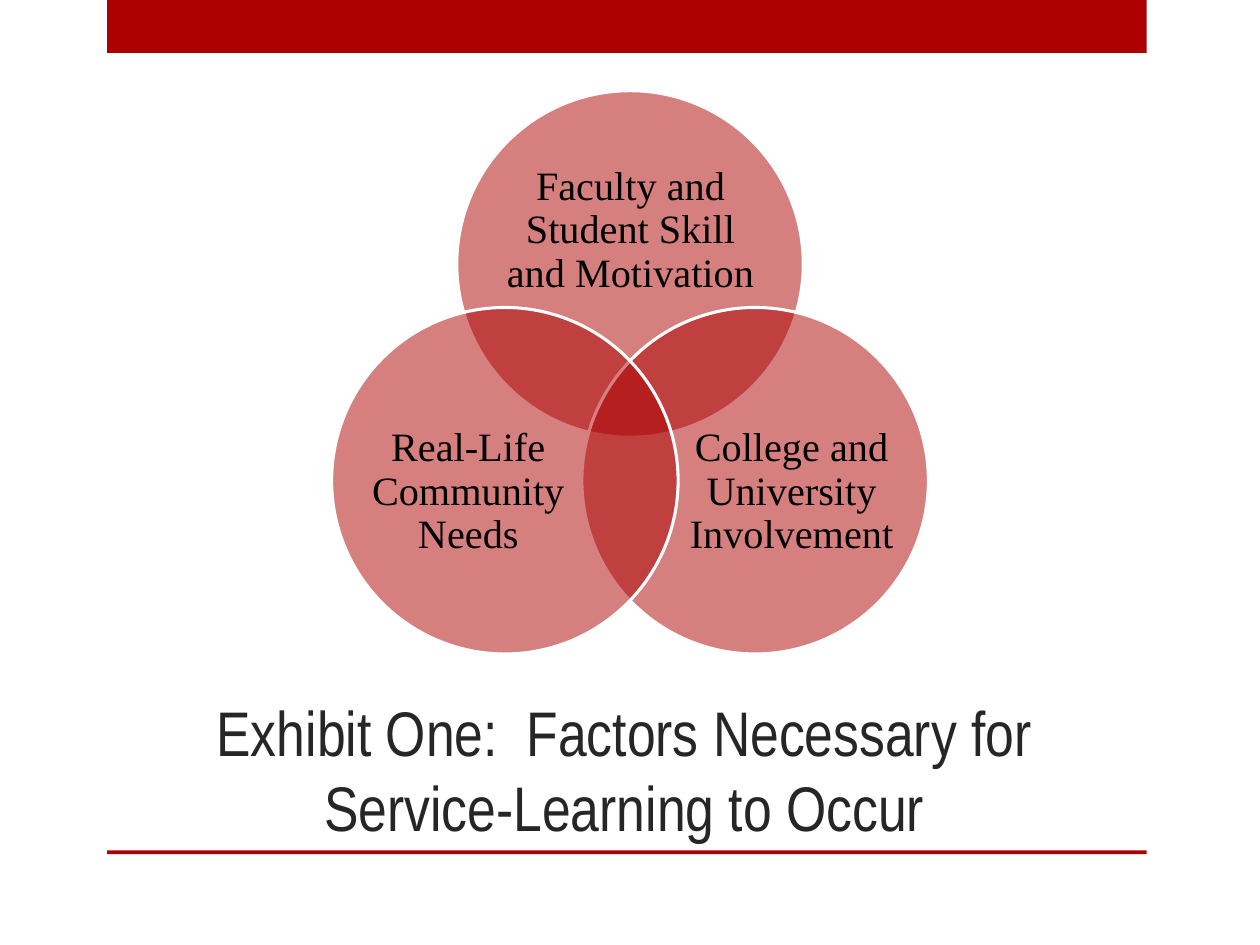
import math

from lxml import etree
from pptx import Presentation
from pptx.dml.color import RGBColor
from pptx.enum.shapes import MSO_SHAPE
from pptx.enum.text import MSO_ANCHOR, PP_ALIGN
from pptx.oxml.ns import qn
from pptx.util import Inches, Pt

RECTANGLE = MSO_SHAPE.RECTANGLE
OVAL = MSO_SHAPE.OVAL
CENTER = PP_ALIGN.CENTER
MIDDLE = MSO_ANCHOR.MIDDLE
BOTTOM = MSO_ANCHOR.BOTTOM

RED = "AD0101"
WHITE = "FFFFFF"
BLACK = "000000"
DARK_GRAY = "262626"

# Text, angle around the diagram centre, label box relative to its circle
FACTORS = [
    ("Faculty and Student Skill and Motivation", -90, (0.37, 0.49, 2.02, 1.24)),
    ("College and University Involvement", 30, (0.84, 0.71, 1.65, 1.51)),
    ("Real-Life Community Needs", 150, (0.26, 0.71, 1.65, 1.51)),
]


def color(hex_string):
    return RGBColor.from_string(hex_string)


def add_filled_shape(shapes, kind, box, fill):
    shape = shapes.add_shape(kind, *map(Inches, box))
    shape.shadow.inherit = False
    shape.fill.solid()
    shape.fill.fore_color.rgb = color(fill)
    shape.line.fill.background()
    return shape


def set_opacity(shape, percent):
    fill_color = shape.fill._xPr.find(qn("a:solidFill"))[0]
    etree.SubElement(fill_color, qn("a:alpha"), val=str(percent * 1000))


def add_text(shapes, box, text, font, size, text_color, anchor, margins, spacing=None):
    shape = shapes.add_textbox(*map(Inches, box))
    frame = shape.text_frame
    frame.word_wrap = True
    frame.vertical_anchor = anchor
    side, vertical = map(Inches, margins)
    frame.margin_left = frame.margin_right = side
    frame.margin_top = frame.margin_bottom = vertical
    paragraph = frame.paragraphs[0]
    paragraph.alignment = CENTER
    paragraph.line_spacing = spacing
    run = paragraph.add_run()
    run.text = text
    run.font.name = font
    run.font.size = Pt(size)
    run.font.color.rgb = color(text_color)


def add_bars(slide, left, width):
    # Top band and the rule below the title
    for top, height in ((0, 0.42), (6.75, 0.03)):
        add_filled_shape(slide.shapes, RECTANGLE, (left, top, width, height), RED)


def add_title(slide, box):
    add_text(slide.shapes, box,
             "Exhibit One:  Factors Necessary for Service-Learning to Occur",
             "Arial Narrow", 36, DARK_GRAY, BOTTOM, (0.2, 0.05))


def add_venn(slide, box):
    left, top, width, height = box
    diameter = 2.75
    orbit = (height - diameter) / 1.5
    center_x = left + width / 2
    center_y = top + diameter / 2 + orbit
    shapes = slide.shapes.add_group_shape().shapes
    for text, angle, (label_x, label_y, label_width, label_height) in FACTORS:
        radians = math.radians(angle)
        x = center_x + orbit * math.cos(radians) - diameter / 2
        y = center_y + orbit * math.sin(radians) - diameter / 2
        # Translucent circle with its label
        circle = add_filled_shape(shapes, OVAL, (x, y, diameter, diameter), RED)
        set_opacity(circle, 50)
        circle.line.color.rgb = color(WHITE)
        circle.line.width = Pt(1.75)
        label_box = (x + label_x, y + label_y, label_width, label_height)
        add_text(shapes, label_box, text, "Times New Roman", 23, BLACK,
                 MIDDLE, (0, 0), 0.9)


def main():
    presentation = Presentation()
    presentation.slide_width = Inches(10)
    presentation.slide_height = Inches(7.5)
    slide = presentation.slides.add_slide(presentation.slide_layouts[6])
    add_bars(slide, 0.85, 8.25)
    add_title(slide, (0.83, 5.33, 8.25, 1.42))
    add_venn(slide, (2.63, 0.72, 4.74, 4.47))
    presentation.save("out.pptx")


if __name__ == "__main__":
    main()
